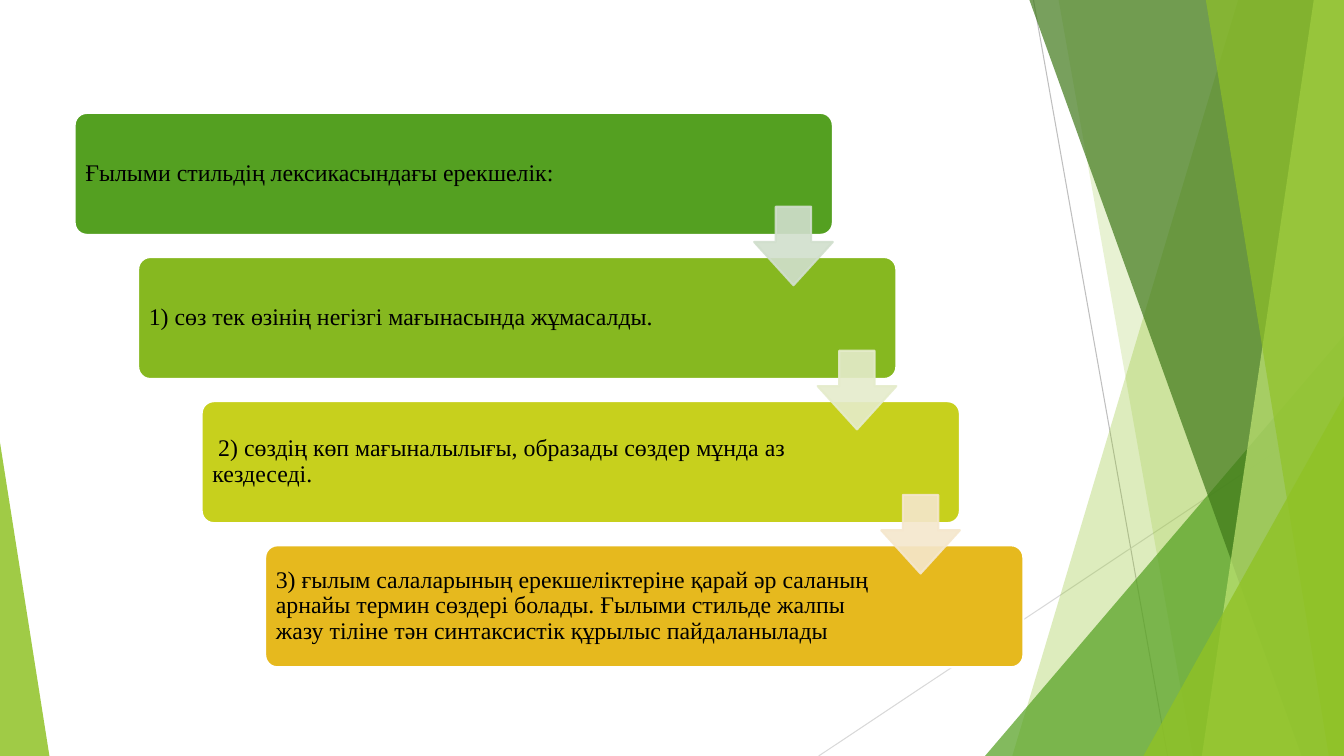
from lxml import etree
from pptx import Presentation
from pptx.dml.color import RGBColor
from pptx.enum.shapes import MSO_CONNECTOR, MSO_SHAPE as SHAPE
from pptx.enum.text import MSO_ANCHOR, PP_ALIGN
from pptx.oxml.ns import qn
from pptx.util import Inches, Pt

WIDTH, HEIGHT = 13.33, 7.5


def rgb(color):
    return RGBColor.from_string(color)


class Deck:
    """Holds the text style and the current slide."""
    font, size, text_color = "Times New Roman", Pt(17), "000000"

    def __init__(self):
        self.prs = Presentation()
        self.prs.slide_width, self.prs.slide_height = Inches(WIDTH), Inches(HEIGHT)
        self.s = self.prs.slides.add_slide(self.prs.slide_layouts[6])

    def set_alpha(self, fill, color, opacity):
        fill.solid()
        fill.fore_color.rgb = rgb(color)
        if opacity < 100:
            for clr in fill._xPr.find(qn("a:solidFill")):
                etree.SubElement(clr, qn("a:alpha"), val=str(opacity * 1000))

    def paint(self, sp, color, opacity=100, line=None):
        sp.shadow.inherit = False
        self.set_alpha(sp.fill, color, opacity)
        if line:
            self.set_alpha(sp.line.fill, line, opacity)
            sp.line.width = Pt(1.5)
        else:
            sp.line.fill.background()

    def line(self, x1, y1, x2, y2, color):
        c = self.s.shapes.add_connector(
            MSO_CONNECTOR.STRAIGHT, Inches(x1), Inches(y1), Inches(x2), Inches(y2))
        c.line.color.rgb = rgb(color)
        c.line.width = Pt(0.75)
        etree.SubElement(c._element.spPr, qn("a:effectLst"))

    def band(self, top_x, bottom_x, color, opacity):
        """Full-height facet that reaches the right edge of the slide."""
        fb = self.s.shapes.build_freeform(Inches(top_x), 0)
        corners = [(WIDTH, 0), (WIDTH, HEIGHT), (bottom_x, HEIGHT)]
        fb.add_line_segments([(Inches(x), Inches(y)) for x, y in corners])
        self.paint(fb.convert_to_shape(), color, opacity)

    def shape(self, kind, x, y, w, h, adj, color, opacity=100, line=None):
        sp = self.s.shapes.add_shape(kind, Inches(x), Inches(y), Inches(w), Inches(h))
        for i, value in enumerate(adj):
            sp.adjustments[i] = value
        self.paint(sp, color, opacity, line)
        return sp

    def step(self, x, y, w, h, color, text):
        sp = self.shape(SHAPE.ROUNDED_RECTANGLE, x, y, w, h, [0.1], color, line="FFFFFF")
        tf = sp.text_frame
        tf.word_wrap = True
        tf.vertical_anchor = MSO_ANCHOR.MIDDLE
        tf.margin_left = tf.margin_top = tf.margin_bottom = Inches(0.07)
        tf.margin_right = Inches(1.47)  # keeps the text clear of the arrows
        p = tf.paragraphs[0]
        p.text = text
        p.alignment = PP_ALIGN.LEFT
        p.line_spacing = 0.9
        p.font.name, p.font.size = self.font, self.size
        p.font.color.rgb = rgb(self.text_color)

    def arrow(self, x, y, size, color):
        self.shape(SHAPE.DOWN_ARROW, x, y, size, size, [0.45, 0.55], color, 90, color)


def draw_facets(deck):
    # Thin lines
    deck.line(10.25, 0, 11.58, HEIGHT, "BFBFBF")
    deck.line(WIDTH, 4.03, 8.12, HEIGHT, "D9D9D9")

    # Facets on the right, back to front
    deck.band(12.28, 10.04, "90C226", 30)
    deck.band(10.5, 11.83, "90C226", 20)
    deck.shape(SHAPE.ISOSCELES_TRIANGLE, 9.77, 3.33, 3.56, 4.17, [1], "54A021", 72)
    deck.band(10.21, 12.91, "3F7819", 70)
    deck.band(13.03, 11.92, "C0E474", 70)
    deck.band(11.96, 13.18, "90C226", 65)
    deck.shape(SHAPE.ISOSCELES_TRIANGLE, 11.34, 3.93, 1.99, 3.57, [1], "90C226", 80)

    # Corner facet on the left
    deck.shape(SHAPE.ISOSCELES_TRIANGLE, 0, 4.39, 0.49, 3.11, [0], "90C226", 85)


def draw_staircase(deck):
    steps = [
        ("54A021", "Ғылыми стильдің лексикасындағы ерекшелік:"),
        ("86B820", "1) сөз тек өзінің негізгі мағынасында жұмасалды."),
        ("C7D01D", " 2) сөздің көп мағыналылығы, образады сөздер мұнда аз кездеседі."),
        ("E6B91E", "3) ғылым салаларының ерекшеліктеріне қарай әр саланың арнайы термин "
                   "сөздері болады. Ғылыми стильде жалпы жазу тіліне тән синтаксистік "
                   "құрылыс пайдаланылады"),
    ]
    arrow_colors = ["D1DFCD", "E5ECCB", "F5E7CD"]
    left, top, dx, dy = 0.74, 1.12, 0.63, 1.43

    # Steps, each shifted right and down
    for i, (color, text) in enumerate(steps):
        deck.step(left + i * dx, top + i * dy, 7.52, 1.21, color, text)

    # Arrows from each step to the next
    for i, color in enumerate(arrow_colors):
        deck.arrow(7.48 + i * dx, 2.05 + i * dy, 0.78, color)


def main():
    deck = Deck()
    draw_facets(deck)
    draw_staircase(deck)
    deck.prs.save("out.pptx")


if __name__ == "__main__":
    main()
